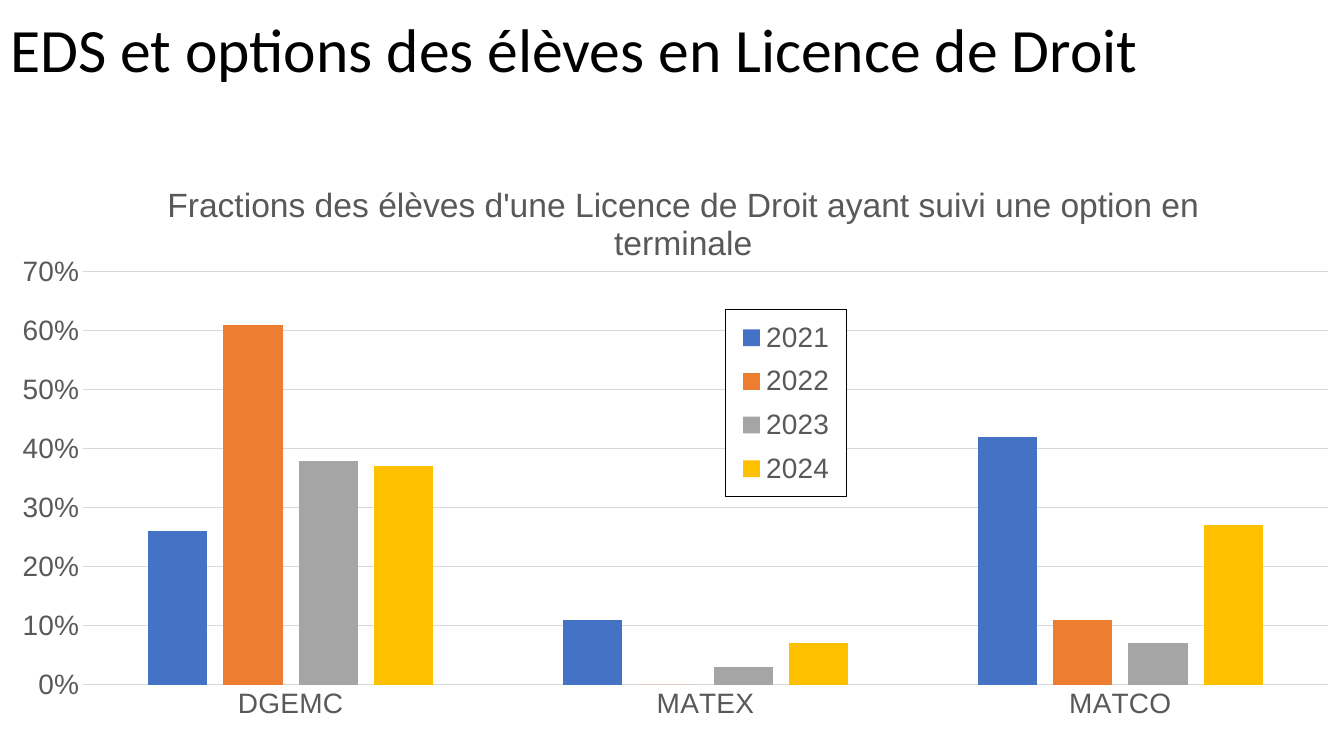
from pptx import Presentation
from pptx.chart.data import CategoryChartData
from pptx.dml.color import RGBColor
from pptx.enum.chart import XL_CHART_TYPE, XL_LEGEND_POSITION, XL_TICK_MARK
from pptx.enum.text import MSO_ANCHOR, MSO_AUTO_SIZE, PP_ALIGN
from pptx.oxml import parse_xml
from pptx.oxml.ns import nsdecls, qn
from pptx.util import Cm, Pt

COLUMNS = XL_CHART_TYPE.COLUMN_CLUSTERED
LEGEND_BOTTOM = XL_LEGEND_POSITION.BOTTOM
NO_TICK = XL_TICK_MARK.NONE
MIDDLE = MSO_ANCHOR.MIDDLE
NO_AUTOFIT = MSO_AUTO_SIZE.NONE
LEFT = PP_ALIGN.LEFT

BLACK = RGBColor(0x00, 0x00, 0x00)
DARK_GREY = RGBColor(0x59, 0x59, 0x59)
LIGHT_GREY = RGBColor(0xD9, 0xD9, 0xD9)
BLUE = RGBColor(0x44, 0x72, 0xC4)
ORANGE = RGBColor(0xED, 0x7D, 0x31)
GREY = RGBColor(0xA5, 0xA5, 0xA5)
YELLOW = RGBColor(0xFF, 0xC0, 0x00)

OPTIONS = ["DGEMC", "MATEX", "MATCO"]
YEARS = [
    ("2021", BLUE, (0.26, 0.11, 0.42)),
    ("2022", ORANGE, (0.61, 0, 0.11)),
    ("2023", GREY, (0.38, 0.03, 0.07)),
    ("2024", YELLOW, (0.37, 0.07, 0.27)),
]


def format_font(font, size, color, name="Arial"):
    font.size = Pt(size)
    font.bold = False
    font.name = name
    font.color.rgb = color


def write(text_frame, text, size, color, name="Arial"):
    text_frame.text = text
    paragraph = text_frame.paragraphs[0]
    format_font(paragraph.runs[0].font, size, color, name)
    return paragraph


def format_line(line, color):
    line.color.rgb = color
    line.width = Pt(0.75)


def place_part(part, index, **fractions):
    """Set a manual layout, in fractions of the chart, as the child at index."""
    old_layout = part.find(qn("c:layout"))
    if old_layout is not None:
        part.remove(old_layout)
    target = '<c:layoutTarget val="inner"/>' if part.tag == qn("c:plotArea") else ""
    modes = '<c:xMode val="edge"/><c:yMode val="edge"/>'
    values = "".join(f'<c:{key} val="{value}"/>' for key, value in fractions.items())
    part.insert(index, parse_xml(
        f'<c:layout {nsdecls("c")}><c:manualLayout>{target}{modes}{values}'
        "</c:manualLayout></c:layout>"))


def add_heading(slide, left, top, width, height):
    heading = slide.shapes.title
    heading.left, heading.top, heading.width, heading.height = left, top, width, height
    frame = heading.text_frame
    frame.word_wrap = True
    frame.auto_size = NO_AUTOFIT
    frame.vertical_anchor = MIDDLE
    paragraph = write(frame, "EDS et options des élèves en Licence de Droit",
                      44, BLACK, "Calibri")
    paragraph.alignment = LEFT
    paragraph.line_spacing = 0.9


def format_axes(chart):
    for axis in (chart.category_axis, chart.value_axis):
        axis.major_tick_mark = axis.minor_tick_mark = NO_TICK
        format_font(axis.tick_labels.font, 20, DARK_GREY)
    format_line(chart.category_axis.format.line, LIGHT_GREY)
    fractions = chart.value_axis
    fractions.minimum_scale, fractions.maximum_scale = 0, 0.7
    fractions.major_unit = 0.1
    fractions.tick_labels.number_format = "0%"
    fractions.tick_labels.number_format_is_linked = False
    fractions.format.line.fill.background()
    format_line(fractions.major_gridlines.format.line, LIGHT_GREY)


def add_legend(chart):
    chart.has_legend = True
    chart.legend.position = LEGEND_BOTTOM
    chart.legend.include_in_layout = True
    format_font(chart.legend.font, 20, DARK_GREY)
    legend = chart.element.find(".//" + qn("c:legend"))
    place_part(legend, 1, x=0.54, y=0.26, w=0.09, h=0.31)
    legend.find(qn("c:overlay")).addnext(parse_xml(
        f'<c:spPr {nsdecls("c", "a")}><a:solidFill><a:srgbClr val="FFFFFF"/></a:solidFill>'
        f'<a:ln w="9525"><a:solidFill><a:srgbClr val="{BLACK}"/></a:solidFill></a:ln></c:spPr>'))


def add_options_chart(slide, left, top, width, height):
    data = CategoryChartData(number_format="0%")
    data.categories = OPTIONS
    for year, _, shares in YEARS:
        data.add_series(year, shares)
    chart = slide.shapes.add_chart(COLUMNS, left, top, width, height, data).chart
    format_font(chart.font, 20, BLACK)

    chart.has_title = True
    write(chart.chart_title.text_frame,
          "Fractions des élèves d'une Licence de Droit ayant suivi une option en terminale",
          24, DARK_GREY)
    place_part(chart.element.find(".//" + qn("c:title")), 1, x=0.12, y=0.04)

    plot = chart.plots[0]
    plot.gap_width, plot.overlap = 219, -27
    plot.vary_by_categories = False
    for series, (_, color, _) in zip(plot.series, YEARS):
        series.format.fill.solid()
        series.format.fill.fore_color.rgb = color
    # Two decimals would shift the plot edges visibly
    place_part(chart.element.find(".//" + qn("c:plotArea")), 0,
               x=0.062, y=0.197, w=0.926, h=0.685)
    format_axes(chart)
    add_legend(chart)


def main():
    deck = Presentation()
    deck.slide_width, deck.slide_height = Cm(33.87), Cm(19.05)
    slide = deck.slides.add_slide(deck.slide_layouts[5])
    add_heading(slide, 0, 0, Cm(29.21), Cm(2.64))
    chart_top = Cm(3.86)
    add_options_chart(slide, 0, chart_top, deck.slide_width, deck.slide_height - chart_top)
    deck.save("out.pptx")


if __name__ == "__main__":
    main()
